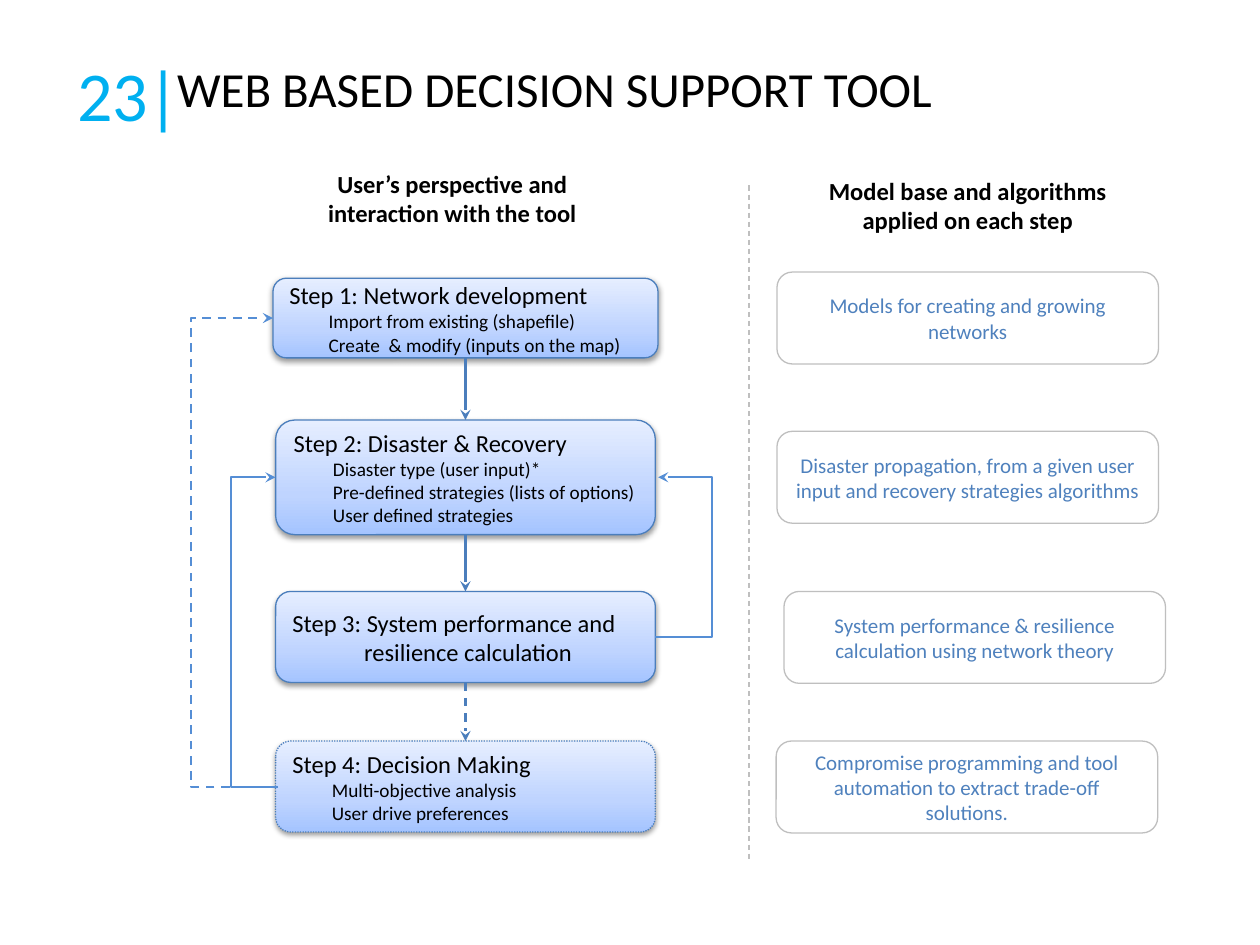
from collections import namedtuple
from copy import deepcopy
from dataclasses import dataclass

from lxml.etree import SubElement
from pptx import Presentation
from pptx.dml.color import RGBColor
from pptx.enum.dml import MSO_LINE
from pptx.enum.shapes import MSO_CONNECTOR, MSO_SHAPE
from pptx.enum.text import MSO_ANCHOR, MSO_AUTO_SIZE, PP_ALIGN
from pptx.oxml.ns import qn
from pptx.util import Pt

Box = namedtuple("Box", "left top width height")
TOP, LEFT, BOTTOM, RIGHT = range(4)  # connection sites of a rounded rectangle


@dataclass(frozen=True)
class Theme:
    font: str = "Calibri"
    ink: str = "000000"
    number: str = "00B0F0"
    model: str = "4F81BD"
    border: str = "BFBFBF"
    step_line: str = "4B7EBC"
    loop: str = "558ED5"
    step_stops: tuple = ((0, "A4C4FF"), (0.35, "BFD4FF"), (1, "E6EEFF"))
    title_size: float = 28
    number_size: float = 40
    heading_size: float = 14
    model_size: float = 12
    detail_size: float = 11
    thin: float = 0.75
    arrow: float = 1.25


THEME = Theme()

# Each step: half width, top, height, outline dash, lines of (text, size, indent)
HEAD, DETAIL = THEME.heading_size, THEME.detail_size
STEPS = [
    (110, 66, 45.5, None, [
        ("Step 1: Network development", HEAD, 0),
        ("Import from existing (shapefile)", DETAIL, 22.5),
        ("Create  & modify (inputs on the map)", DETAIL, 22.5)]),
    (108.5, 147, 65.5, None, [
        ("Step 2: Disaster & Recovery", HEAD, 0),
        ("Disaster type (user input)*", DETAIL, 22.5),
        ("Pre-defined strategies (lists of options)", DETAIL, 22.5),
        ("User defined strategies", DETAIL, 22.5)]),
    (108.5, 245, 52, None, [
        ("Step 3: System performance and", HEAD, 0),
        ("resilience calculation", HEAD, 41)]),
    (108.5, 330.5, 52, MSO_LINE.ROUND_DOT, [
        ("Step 4: Decision Making", HEAD, 0),
        ("Multi-objective analysis", DETAIL, 22.5),
        ("User drive preferences", DETAIL, 22.5)]),
]

# Each model: left, top, text
MODELS = [
    (0.5, 58.5, "Models for creating and growing networks"),
    (0.5, 149.5, "Disaster propagation, from a given user input and recovery "
                 "strategies algorithms"),
    (4.5, 241, "System performance & resilience calculation using network theory"),
    (0, 326.5, "Compromise programming and tool automation to extract "
               "trade-off solutions."),
]


def rgb(code):
    return RGBColor.from_string(code)


def points(*lengths):
    return [Pt(length) for length in lengths]


def write(frame, text, size, color=THEME.ink, bold=False, align=PP_ALIGN.LEFT,
          indent=0):
    """Fill the frame's empty first paragraph, or add one after it."""
    paragraph = frame.paragraphs[0]
    if paragraph.text:
        paragraph = frame.add_paragraph()
    paragraph.text = text
    paragraph.alignment = align
    if indent:
        properties = paragraph._p.get_or_add_pPr()
        properties.set("marL", str(Pt(indent)))
        properties.set("indent", "0")
    font = paragraph.font
    font.name, font.size, font.bold = THEME.font, Pt(size), bold
    font.color.rgb = rgb(color)


def set_line(line, color, width, dash=None):
    line.color.rgb = rgb(color)
    line.width = Pt(width)
    if dash:
        line.dash_style = dash


def text_box(slide, box):
    frame = slide.shapes.add_textbox(*points(*box)).text_frame
    frame.word_wrap = True
    return frame


def rounded_box(slide, box, color, dash=None):
    shape = slide.shapes.add_shape(MSO_SHAPE.ROUNDED_RECTANGLE, *points(*box))
    shape.shadow.inherit = False
    shape.fill.background()
    set_line(shape.line, color, THEME.thin, dash)
    shape.text_frame.word_wrap = True
    shape.text_frame.vertical_anchor = MSO_ANCHOR.MIDDLE
    return shape


def raise_step(shape):
    """Give a step its three-stop gradient and soft shadow."""
    properties = shape._element.spPr
    shape.fill.gradient()
    shape.fill.gradient_angle = 90
    stops = properties.find(".//" + qn("a:gsLst"))
    stops.append(deepcopy(stops[0]))
    for stop, (position, color) in zip(shape.fill.gradient_stops, THEME.step_stops):
        stop.position, stop.color.rgb = position, rgb(color)
    shadow = SubElement(properties.find(qn("a:effectLst")), qn("a:outerShdw"),
                        blurRad=str(Pt(3.1)), dist=str(Pt(1.6)), dir="5400000",
                        rotWithShape="0")
    black = SubElement(shadow, qn("a:srgbClr"), val="000000")
    SubElement(black, qn("a:alpha"), val="38000")


def connect(slide, kind, start, end, color, width, dash=None, arrow=True):
    connector = slide.shapes.add_connector(kind, *points(*start, *end))
    set_line(connector.line, color, width, dash)
    properties = connector._element.spPr
    if arrow:
        SubElement(properties.find(qn("a:ln")), qn("a:tailEnd"), type="stealth")
    SubElement(properties, qn("a:effectLst"))
    return connector


def loop_back(slide, start, end, lane, source=None, target=None, dash=None):
    """Run an elbow arrow out to the lane and back; source and target are
    (shape, site) pairs to glue the ends to."""
    connector = connect(slide, MSO_CONNECTOR.ELBOW, start, end, THEME.loop,
                        THEME.arrow, dash)
    if source:
        connector.begin_connect(*source)
    if target:
        connector.end_connect(*target)
    properties = connector._element.spPr
    frame = properties.xfrm
    if frame.flipH and frame.flipV:
        frame.flipH = frame.flipV = False
        frame.rot = 180
    bend = round((lane - start[0]) / (end[0] - start[0]) * 100000)
    guides = properties.find(qn("a:prstGeom")).get_or_add_avLst()
    SubElement(guides, qn("a:gd"), name="adj1", fmla=f"val {bend}")


def title_row(slide, box):
    number = text_box(slide, Box(box.left, box.top, 74, box.height))
    write(number, "23|", THEME.number_size, THEME.number)
    title = slide.shapes.title
    title.left, title.top, title.width, title.height = points(
        box.left + 57, box.top + 4, box.width - 57, 41)
    frame = title.text_frame
    frame.word_wrap = True
    frame.auto_size = MSO_AUTO_SIZE.NONE
    frame.vertical_anchor = MSO_ANCHOR.TOP
    write(frame, "WEB BASED DECISION SUPPORT TOOL", THEME.title_size)


def heading(slide, box, lines):
    frame = text_box(slide, box)
    for line in lines:
        write(frame, line, THEME.heading_size, bold=True, align=PP_ALIGN.CENTER)


def step_flow(slide, box):
    heading(slide, Box(box.left + 60, box.top, 179, 41),
            ["User’s perspective and", "interaction with the tool"])
    center = box.left + 157
    steps, places = [], []
    for half, top, height, dash, lines in STEPS:
        place = Box(center - half, box.top + top, 2 * half, height)
        step = rounded_box(slide, place, THEME.step_line, dash)
        raise_step(step)
        for text, size, indent in lines:
            write(step.text_frame, text, size, indent=indent)
        steps.append(step)
        places.append(place)

    for i, dash in enumerate([None, None, MSO_LINE.DASH]):
        above, below = places[i], places[i + 1]
        arrow = connect(slide, MSO_CONNECTOR.STRAIGHT,
                        (center, above.top + above.height), (center, below.top),
                        THEME.step_line, THEME.arrow, dash)
        arrow.begin_connect(steps[i], BOTTOM)
        arrow.end_connect(steps[i + 1], TOP)

    network, disaster, system, decision = steps
    left = [(p.left, p.top + p.height / 2) for p in places]
    right = [(p.left + p.width, p.top + p.height / 2) for p in places]
    loop_back(slide, (left[3][0] + 1.5, left[3][1]), left[1], box.left + 23,
              target=(disaster, LEFT))
    loop_back(slide, left[3], left[0], box.left, (decision, LEFT),
              (network, LEFT), MSO_LINE.DASH)
    loop_back(slide, right[2], (right[1][0] + 1.5, right[1][1]),
              box.left + box.width, source=(system, RIGHT))


def model_column(slide, box):
    heading(slide, Box(box.left + 20, box.top, 179, 41),
            ["Model base and algorithms", "applied on each step"])
    for left, top, text in MODELS:
        model = rounded_box(slide, Box(box.left + left, box.top + top, 218, 52.5),
                            THEME.border)
        write(model.text_frame, text, THEME.model_size, THEME.model,
              align=PP_ALIGN.CENTER)


def main():
    deck = Presentation()
    deck.slide_width, deck.slide_height = points(720, 540)
    slide = deck.slides.add_slide(deck.slide_layouts[5])
    title_row(slide, Box(37, 26, 527, 55))
    step_flow(slide, Box(109, 93, 298, 383))
    connect(slide, MSO_CONNECTOR.STRAIGHT, (428, 106), (428, 491), THEME.border,
            THEME.thin, MSO_LINE.DASH, arrow=False)
    model_column(slide, Box(443.5, 97, 223, 379))
    deck.save("out.pptx")


if __name__ == "__main__":
    main()
